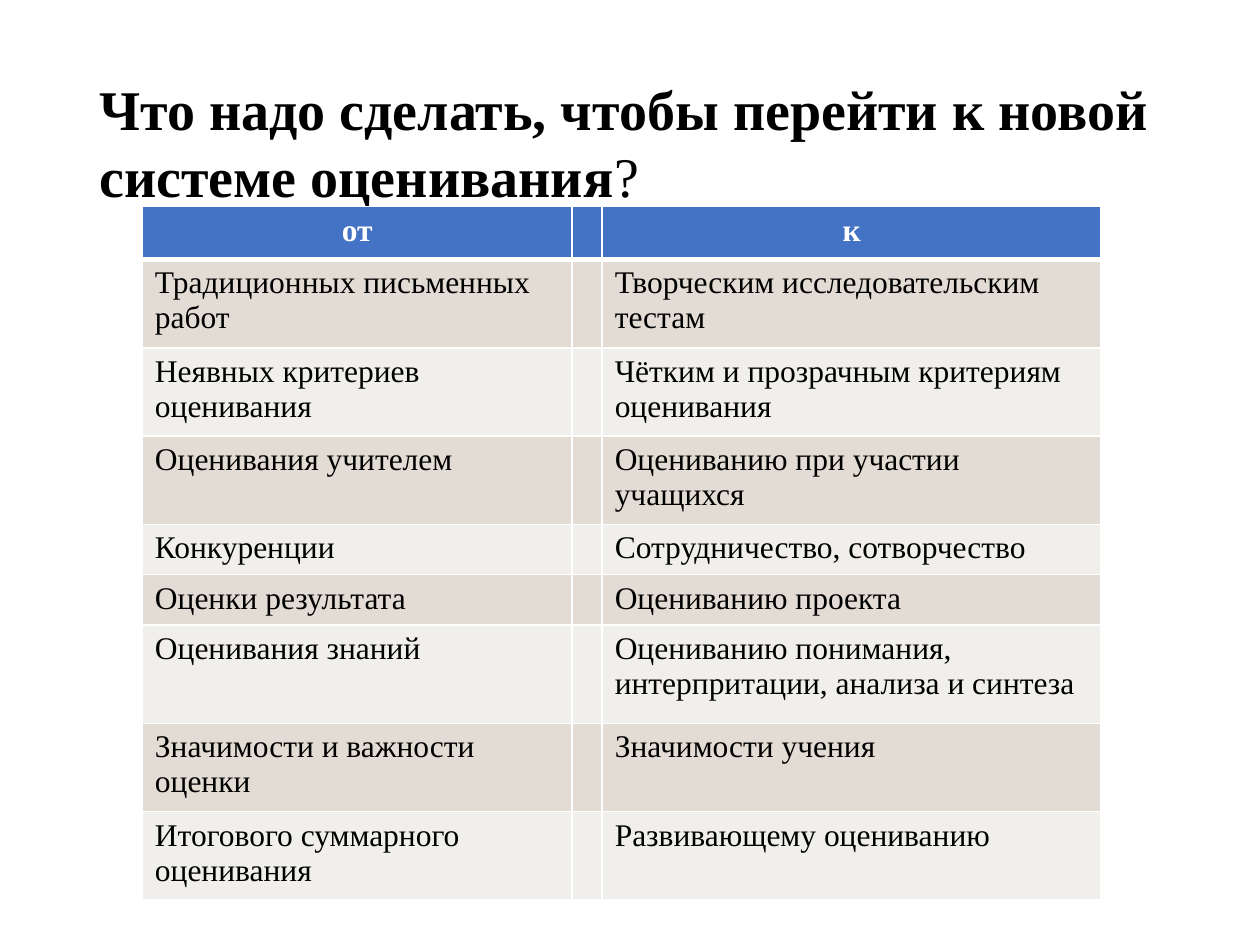
from lxml.etree import SubElement
from pptx import Presentation
from pptx.dml.color import RGBColor
from pptx.enum.text import MSO_ANCHOR, PP_ALIGN
from pptx.oxml.ns import qn
from pptx.util import Inches, Pt

FONT = "Times New Roman"
BLACK = RGBColor(0x00, 0x00, 0x00)
WHITE = RGBColor(0xFF, 0xFF, 0xFF)
BLUE = RGBColor(0x44, 0x72, 0xC4)
BEIGE = RGBColor(0xE2, 0xDC, 0xD4)
LIGHT = RGBColor(0xF1, 0xEF, 0xEB)

ROWS = [
    ("от", "к"),
    ("Традиционных письменных работ", "Творческим исследовательским тестам"),
    ("Неявных критериев оценивания", "Чётким и прозрачным критериям оценивания"),
    ("Оценивания учителем", "Оцениванию при участии учащихся"),
    ("Конкуренции", "Сотрудничество, сотворчество"),
    ("Оценки результата", "Оцениванию проекта"),
    ("Оценивания знаний", "Оцениванию понимания, интерпритации, анализа и синтеза"),
    ("Значимости и важности оценки", "Значимости учения"),
    ("Итогового суммарного оценивания", "Развивающему оцениванию"),
]
COL_WIDTHS = [3.41, 0.23, 3.96]
ROW_HEIGHTS = [0.42, 0.65, 0.65, 0.65, 0.38, 0.38, 0.78, 0.65, 0.65]


def add_run(p, text, color, **formats):
    r = p.add_run()
    r.text = text
    r.font.color.rgb = color
    for name, value in {"name": FONT, **formats}.items():
        setattr(r.font, name, value)


def add_borders(cell, widths):
    tc_pr = cell._tc.get_or_add_tcPr()
    for side, width in widths.items():
        ln = SubElement(tc_pr, qn(f"a:ln{side}"), w=str(Pt(width)))
        fill = SubElement(ln, qn("a:solidFill"))
        SubElement(fill, qn("a:srgbClr"), val=str(WHITE))


prs = Presentation()
prs.slide_width, prs.slide_height = Inches(10), Inches(7.5)
s = prs.slides.add_slide(prs.slide_layouts[6])

# Title
sp = s.shapes.add_textbox(Inches(0.69), Inches(0.4), Inches(8.62), Inches(1.45))
tf = sp.text_frame
for name, value in {"word_wrap": True, "vertical_anchor": MSO_ANCHOR.MIDDLE}.items():
    setattr(tf, name, value)
p = tf.paragraphs[0]
title = "Что надо сделать, чтобы перейти к новой системе оценивания"
for text, bold in ((title, True), ("?", False)):
    add_run(p, text, BLACK, size=Pt(32), bold=bold)

# Table grid
table = s.shapes.add_table(
    len(ROWS), len(COL_WIDTHS), Inches(1.13), Inches(1.64),
    Inches(sum(COL_WIDTHS)), Inches(sum(ROW_HEIGHTS))).table
for col, width in zip(table.columns, COL_WIDTHS):
    col.width = Inches(width)
for row, height in zip(table.rows, ROW_HEIGHTS):
    row.height = Inches(height)

# Cells: blue header, then alternating bands; the middle column stays empty
for i, (old, new) in enumerate(ROWS):
    header = i == 0
    band = BLUE if header else (LIGHT, BEIGE)[i % 2]
    borders = {"L": 1, "R": 1, "T": 3 if i == 1 else 1, "B": 3 if header else 1}
    for j, text in enumerate((old, "", new)):
        cell = table.cell(i, j)
        add_borders(cell, borders)
        cell.fill.solid()
        cell.fill.fore_color.rgb = band
        if text:
            p = cell.text_frame.paragraphs[0]
            p.alignment = PP_ALIGN.CENTER if header else PP_ALIGN.LEFT
            add_run(p, text, WHITE if header else BLACK, size=Pt(18), bold=header)

prs.save("out.pptx")
